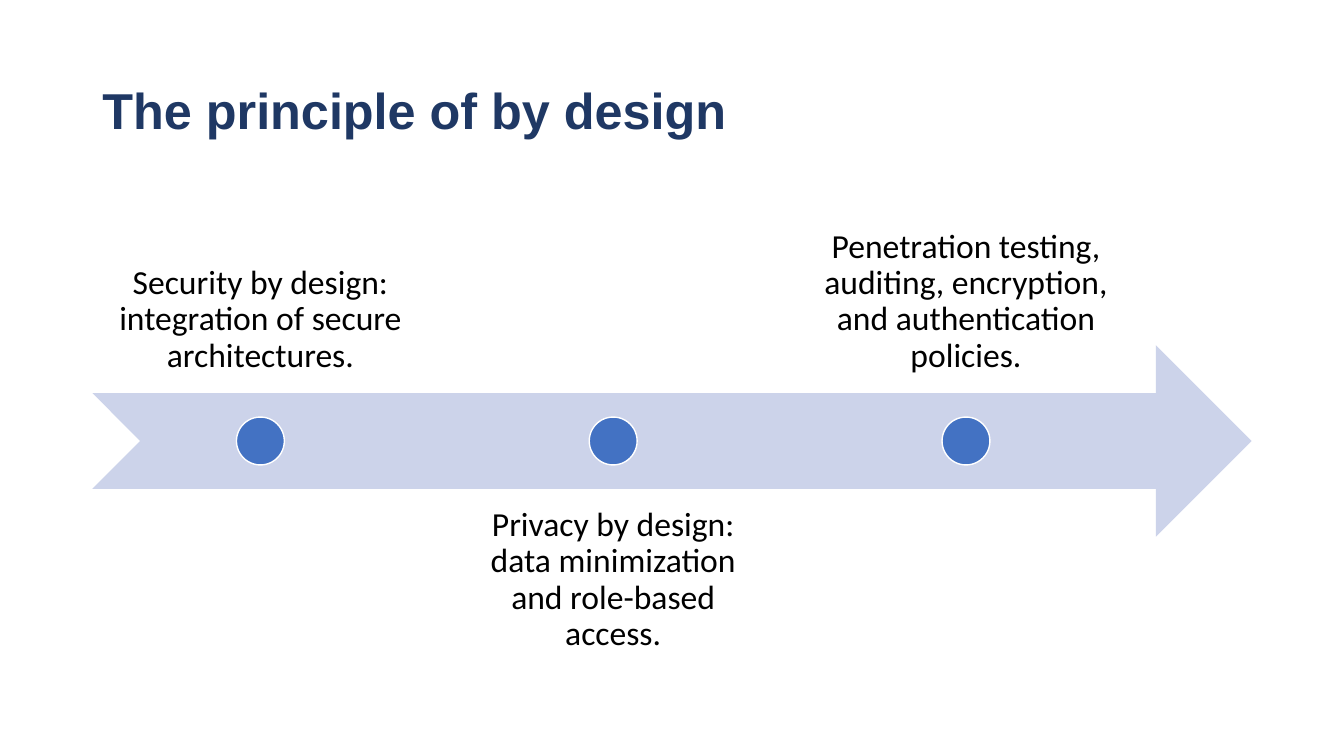
from pptx import Presentation
from pptx.dml.color import RGBColor
from pptx.enum.shapes import MSO_SHAPE as SHAPE
from pptx.enum.text import MSO_ANCHOR as ANCHOR, PP_ALIGN as ALIGN
from pptx.util import Pt

# Content
TITLE = "The principle of by design"
STEPS = [
    "Security by design: integration of secure architectures.",
    "Privacy by design: data minimization and role-based access.",
    "Penetration testing, auditing, encryption, and authentication policies.",
]
COLORS = {"title": "1F3864", "text": "000000", "arrow": "CCD3EA",
          "dot": "4372C3", "outline": "FFFFFF"}

# Layout in points
LEFT, WIDTH = 66, 828
BAND = 136.8            # height of the arrow and of each label
MIDDLE = 315            # centre line of the arrow
LABEL_W, GAP = 240, 12
LABEL_TOP = 144
DOT = BAND / 4
INSET = 13.44


def color(name):
    return RGBColor.from_string(COLORS[name])


def write(tf, text, font, size, color_name, bold=False):
    p = tf.paragraphs[0]
    p.line_spacing = 0.9
    r = p.add_run()
    r.text = text
    r.font.name, r.font.size, r.font.bold = font, Pt(size), bold
    r.font.color.rgb = color(color_name)
    return p


def add_filled(s, kind, x, y, w, h, fill):
    sp = s.shapes.add_shape(kind, Pt(x), Pt(y), Pt(w), Pt(h))
    sp.shadow.inherit = False
    sp.fill.solid()
    sp.fill.fore_color.rgb = color(fill)
    sp.line.fill.background()
    return sp


def add_label(s, text, x, y, anchor):
    sp = s.shapes.add_textbox(Pt(x), Pt(y), Pt(LABEL_W), Pt(BAND))
    tf = sp.text_frame
    tf.word_wrap = True
    tf.vertical_anchor = anchor
    tf.margin_left = tf.margin_right = Pt(INSET)
    tf.margin_top = tf.margin_bottom = Pt(INSET)
    write(tf, text, "Calibri", 24, "text").alignment = ALIGN.CENTER


prs = Presentation()
prs.slide_width, prs.slide_height = Pt(960), Pt(540)
s = prs.slides.add_slide(prs.slide_layouts[5])

# Title
title = s.shapes.title
title.left, title.top, title.width, title.height = Pt(LEFT), Pt(28.8), Pt(WIDTH), Pt(104.4)
title.text_frame.word_wrap = True
title.text_frame.vertical_anchor = ANCHOR.MIDDLE
write(title.text_frame, TITLE, "Arial", 36, "title", True).alignment = ALIGN.LEFT

# Arrow
arrow = add_filled(s, SHAPE.NOTCHED_RIGHT_ARROW, LEFT, MIDDLE - BAND / 2, WIDTH, BAND, "arrow")
arrow.adjustments[0] = arrow.adjustments[1] = 0.5

# Steps: labels alternate above and below the arrow
for i, step in enumerate(STEPS):
    x = LEFT + i * (LABEL_W + GAP)
    if i % 2 == 0:
        add_label(s, step, x, LABEL_TOP, ANCHOR.BOTTOM)
    else:
        add_label(s, step, x, 2 * MIDDLE - LABEL_TOP - BAND, ANCHOR.TOP)
    dot = add_filled(s, SHAPE.OVAL, x + (LABEL_W - DOT) / 2, MIDDLE - DOT / 2, DOT, DOT, "dot")
    dot.line.color.rgb = color("outline")
    dot.line.width = Pt(1)

prs.save("out.pptx")
